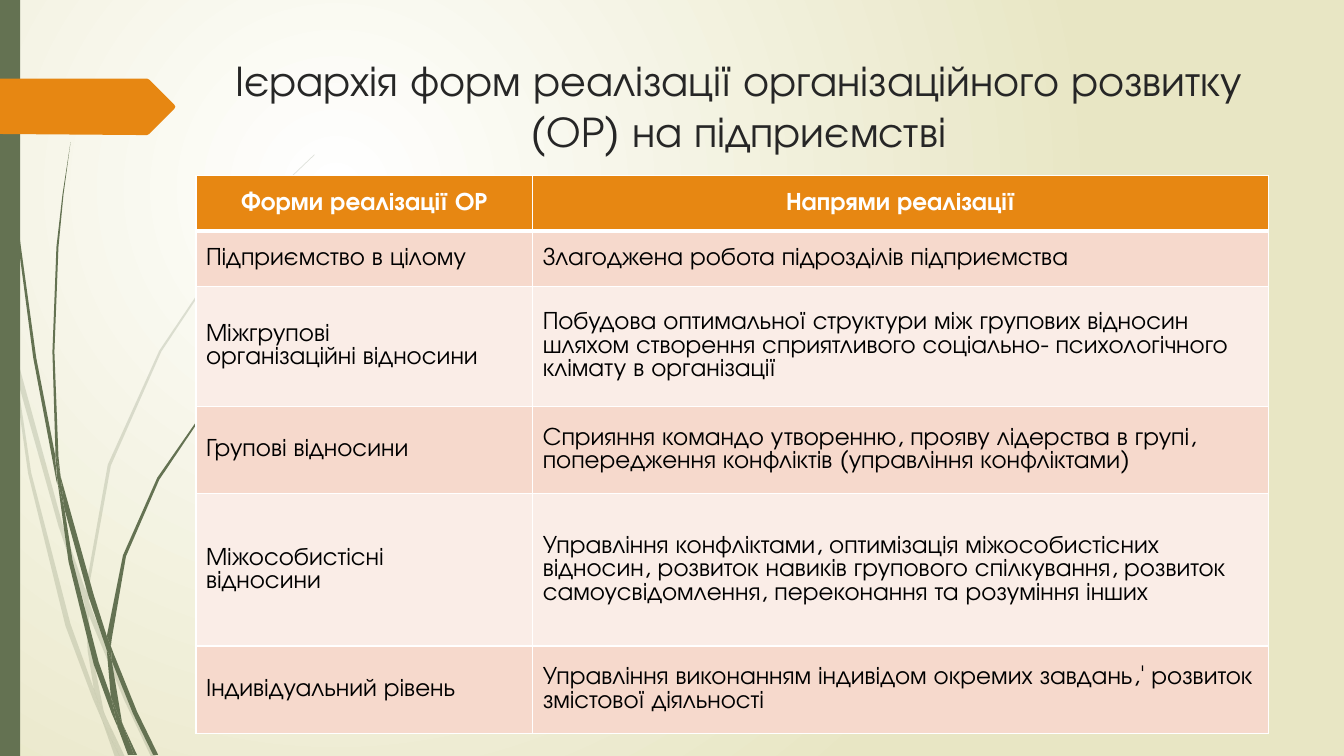
from typing import NamedTuple

from lxml import etree
from pptx import Presentation
from pptx.dml.color import RGBColor
from pptx.enum.shapes import MSO_SHAPE
from pptx.enum.text import MSO_ANCHOR, PP_ALIGN
from pptx.oxml.ns import qn
from pptx.util import Pt

RECT = MSO_SHAPE.RECTANGLE
MIDDLE = MSO_ANCHOR.MIDDLE
LEFT, CENTER = PP_ALIGN.LEFT, PP_ALIGN.CENTER

WHITE = RGBColor(0xFF, 0xFF, 0xFF)
BLACK = RGBColor(0, 0, 0)
SAND = RGBColor(0xE8, 0xE6, 0xC4)
GREEN = RGBColor(0x64, 0x72, 0x52)
ORANGE = RGBColor(0xE7, 0x87, 0x12)
CHARCOAL = RGBColor(0x26, 0x26, 0x26)
PEACH = RGBColor(0xF6, 0xD9, 0xCC)
BLUSH = RGBColor(0xFA, 0xED, 0xE7)

FONT = "TeX Gyre Adventor"
GRID = 0.72  # points per outline unit
INSET = Pt(7.2)

Outline = list[tuple[int, int]]


class Style(NamedTuple):
    size: float
    color: RGBColor
    bold: bool
    align: PP_ALIGN
    leading: float


class Row(NamedTuple):
    height: float
    form: str
    direction: str


TITLE = Style(31, CHARCOAL, False, CENTER, 37)
HEAD = Style(18, WHITE, True, CENTER, 16.8)
BODY = Style(18, BLACK, False, LEFT, 16.8)

COLUMNS = (240.5, 525.6)
ROWS = [
    Row(39.6, "Форми реалізації ОР", "Напрями реалізації"),
    Row(39.6, "Підприємство в цілому", "Злагоджена робота підрозділів підприємства"),
    Row(85.7, "Міжгрупові\nорганізаційні відносини",
        "Побудова оптимальної структури між групових відносин шляхом створення "
        "сприятливого соціально- психологічного клімату в організації"),
    Row(62.6, "Групові відносини",
        "Сприяння командо утворенню, прояву лідерства в групі, "
        "попередження конфліктів (управління конфліктами)"),
    Row(108.7, "Міжособистісні\nвідносини",
        "Управління конфліктами, оптимізація міжособистісних відносин, розвиток навиків "
        "групового спілкування, розвиток самоусвідомлення, переконання та розуміння інших"),
    Row(62.6, "Індивідуальний рівень",
        "Управління виконанням індивідом окремих завдань,' розвиток змістової діяльності"),
]

PALE_GRASS: list[Outline] = [
    [(11, 350), (9, 322), (0, 282), (0, 299), (10, 344)],
    [(58, 522), (84, 599), (85, 586), (62, 520), (14, 345), (17, 376)],
    [(92, 607), (88, 596), (88, 610), (123, 694), (150, 751), (155, 751), (127, 692)],
    [(119, 751), (124, 751), (105, 711)],
    [(93, 683), (70, 619), (31, 469), (17, 376), (11, 350), (28, 470), (65, 621),
     (92, 693), (101, 714), (99, 707)],
    [(84, 599), (87, 646), (93, 683), (96, 692), (105, 711), (103, 706), (91, 646),
     (88, 610), (88, 608)],
    [(88, 584), (110, 462), (160, 349), (229, 245), (268, 198), (290, 175), (312, 154),
     (312, 153), (289, 175), (268, 197), (228, 244), (158, 348), (107, 461), (85, 584),
     (85, 586), (88, 596)],
    [(101, 714), (114, 751), (119, 751)],
    [(88, 608), (88, 610), (88, 596), (85, 586), (84, 599)],
    [(96, 692), (93, 683), (99, 707), (101, 714), (119, 751), (105, 711)],
]
DARK_GRASS: list[Outline] = [
    [(7, 110), (17, 233), (33, 355), (56, 477), (57, 481), (55, 457), (55, 453), (36, 355),
     (19, 232), (8, 109), (5, 48), (4, 0), (3, 0), (4, 48)],
    [(88, 592), (106, 645), (106, 633), (106, 631), (93, 590), (60, 472), (64, 505)],
    [(113, 649), (110, 641), (111, 656), (132, 708), (152, 749), (157, 749), (136, 706)],
    [(110, 691), (98, 657), (72, 556), (64, 505), (57, 477), (68, 557), (93, 659),
     (111, 708), (117, 722), (116, 717)],
    [(60, 472), (58, 453), (54, 349), (58, 245), (63, 193), (70, 141), (62, 193),
     (56, 245), (52, 349), (55, 449)],
    [(133, 749), (136, 749), (122, 719)],
    [(57, 477), (64, 505), (60, 472), (55, 449), (55, 453)],
    [(111, 633), (125, 552), (158, 476), (205, 406), (231, 374), (245, 359), (261, 344),
     (260, 344), (245, 358), (231, 373), (204, 405), (156, 474), (122, 551), (106, 631),
     (110, 641)],
    [(117, 722), (127, 749), (131, 749)],
    [(106, 645), (110, 691), (116, 706), (122, 719), (121, 716), (111, 656), (109, 651)],
    [(106, 645), (109, 651), (111, 656), (110, 641), (106, 631), (106, 633)],
    [(116, 706), (110, 691), (116, 717), (117, 722), (130, 749), (133, 749), (122, 719)],
]
PAGE_ARROW: Outline = [(173, 108), (148, 133), (146, 134), (136, 134), (0, 133), (0, 78),
                       (146, 78), (148, 79), (173, 104), (174, 106)]


def paint(sp, color: RGBColor, opacity: int = 100) -> None:
    sp.shadow.inherit = False
    sp.fill.solid()
    sp.fill.fore_color.rgb = color
    sp.line.fill.background()
    if opacity < 100:
        clr = sp.fill._xPr.find(".//" + qn("a:srgbClr"))
        etree.SubElement(clr, qn("a:alpha"), val=str(opacity * 1000))


def add_outline(s, outline: Outline, color: RGBColor, opacity: int = 100) -> None:
    points = [(Pt(x * GRID), Pt(y * GRID)) for x, y in outline]
    builder = s.shapes.build_freeform(*points[0])
    builder.add_line_segments(points[1:], close=True)
    paint(builder.convert_to_shape(), color, opacity)


def write(tf, text: str, style: Style) -> None:
    for i, line in enumerate(text.split("\n")):
        p = tf.add_paragraph() if i else tf.paragraphs[0]
        p.alignment = style.align
        p.line_spacing = Pt(style.leading)
        r = p.add_run()
        r.text = line
        r.font.name = FONT
        r.font.size = Pt(style.size)
        r.font.bold = style.bold
        r.font.color.rgb = style.color


def add_borders(cell, top: int, bottom: int) -> None:
    tc_pr = cell._tc.get_or_add_tcPr()
    widths = {"a:lnL": 1, "a:lnR": 1, "a:lnT": top, "a:lnB": bottom}
    for i, (tag, width) in enumerate(widths.items()):
        ln = etree.Element(qn(tag), w=str(Pt(width)))
        fill = etree.SubElement(ln, qn("a:solidFill"))
        etree.SubElement(fill, qn("a:srgbClr"), val=str(WHITE))
        tc_pr.insert(i, ln)


def set_background(s) -> None:
    """Radial gradient from white to sand."""
    fill = s.background.fill
    fill.gradient()
    for stop, color, position in zip(fill.gradient_stops, (WHITE, SAND), (0, 1)):
        stop.color.rgb = color
        stop.position = position
    lin = s._element.find(".//" + qn("a:lin"))
    radial = etree.Element(qn("a:path"), path="circle")
    etree.SubElement(radial, qn("a:fillToRect"), l="50000", t="50000", r="100000", b="100000")
    lin.getparent().replace(lin, radial)


def add_forms_table(s) -> None:
    frame = s.shapes.add_table(len(ROWS), len(COLUMNS), Pt(140), Pt(125.3),
                               Pt(sum(COLUMNS)), Pt(sum(row.height for row in ROWS)))
    table = frame.table
    for column, width in zip(table.columns, COLUMNS):
        column.width = Pt(width)
    for i, row in enumerate(ROWS):
        table.rows[i].height = Pt(row.height)
        for j, text in enumerate((row.form, row.direction)):
            cell = table.cell(i, j)
            cell.vertical_anchor = MIDDLE
            cell.margin_left = cell.margin_right = INSET
            cell.margin_top = cell.margin_bottom = INSET
            cell.fill.solid()
            cell.fill.fore_color.rgb = ORANGE if i == 0 else (BLUSH, PEACH)[i % 2]
            add_borders(cell, top=3 if i == 1 else 1, bottom=3 if i == 0 else 1)
            write(cell.text_frame, text, BODY if i else HEAD)


def main() -> None:
    prs = Presentation()
    prs.slide_width, prs.slide_height = Pt(960), Pt(540)
    s = prs.slides.add_slide(prs.slide_layouts[6])
    set_background(s)
    for outline in PALE_GRASS:
        add_outline(s, outline, GREEN, 20)
    for outline in DARK_GRASS:
        add_outline(s, outline, GREEN)
    paint(s.shapes.add_shape(RECT, 0, 0, Pt(14.4), prs.slide_height), GREEN)
    add_outline(s, PAGE_ARROW, ORANGE)

    tf = s.shapes.add_textbox(Pt(148.3), Pt(31.7), Pt(758.2), Pt(86.4)).text_frame
    tf.word_wrap = True
    tf.vertical_anchor = MIDDLE
    write(tf, "Ієрархія форм реалізації організаційного розвитку (ОР) на підприємстві", TITLE)
    add_forms_table(s)
    prs.save("out.pptx")


if __name__ == "__main__":
    main()
